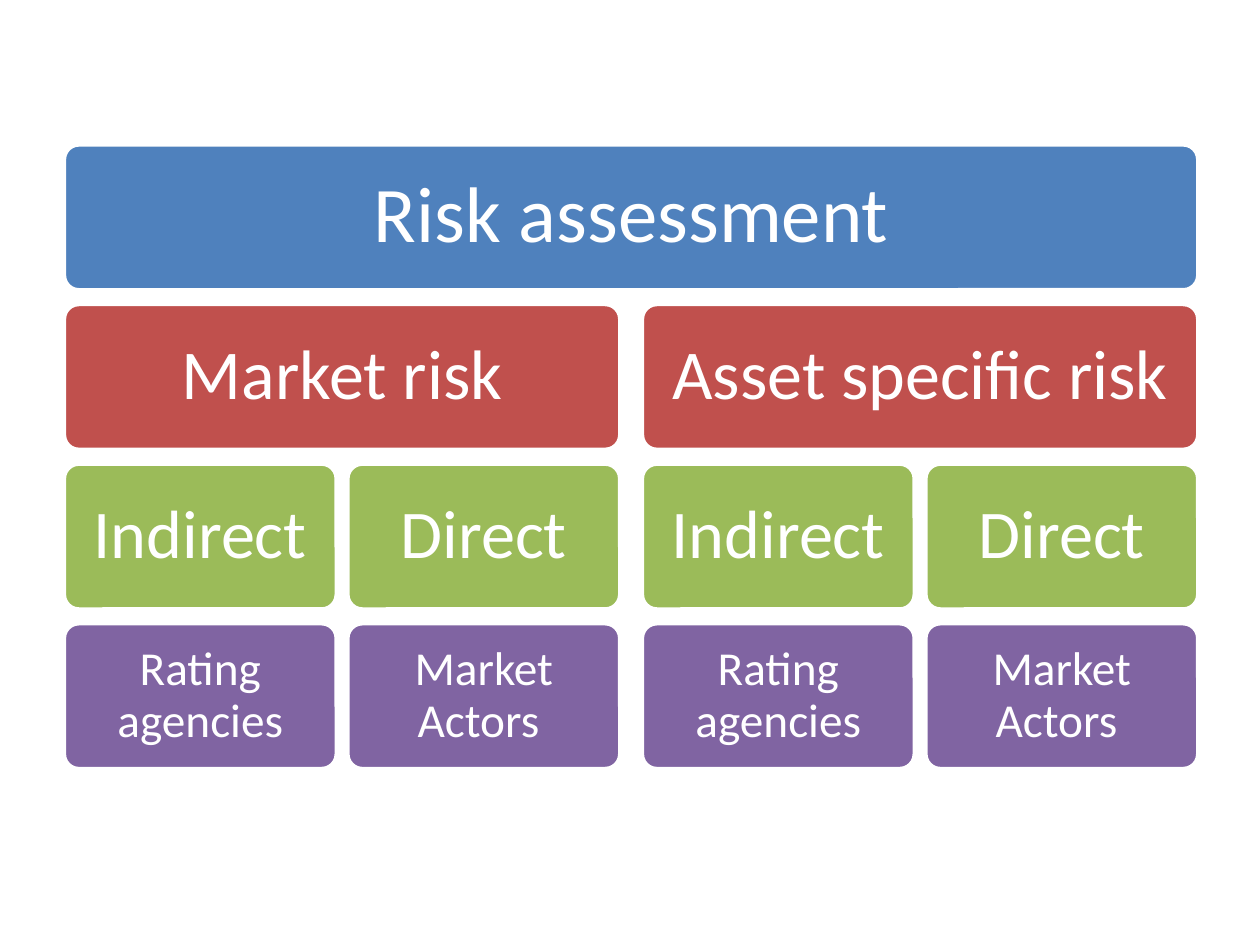
from pptx import Presentation
from pptx.dml.color import RGBColor
from pptx.enum.shapes import MSO_SHAPE
from pptx.enum.text import MSO_ANCHOR, PP_ALIGN
from pptx.util import Pt

WHITE = RGBColor(0xFF, 0xFF, 0xFF)
BLUE = RGBColor(0x4F, 0x81, 0xBD)
RED = RGBColor(0xC0, 0x50, 0x4D)
GREEN = RGBColor(0x9B, 0xBB, 0x59)
PURPLE = RGBColor(0x80, 0x64, 0xA2)

# Grid: two pairs of columns, four levels
LEFT, TOP = 36.8, 82.8
BOX_W, BOX_H = 155.4, 82.8
COL_STEP, PAIR_STEP, ROW_STEP = 162, 330.3, 91.2
COLS = [LEFT + pair * PAIR_STEP + col * COL_STEP
        for pair in range(2) for col in range(2)]

# Levels: fill, font size, inset, labels
LEVELS = [
    (BLUE, 45, 11, ["Risk assessment"]),
    (RED, 40, 10, ["Market risk", "Asset specific risk"]),
    (GREEN, 39, 9, ["Indirect", "Direct"] * 2),
    (PURPLE, 27, 5.5, ["Rating agencies", "Market Actors "] * 2),
]

prs = Presentation()
prs.slide_width, prs.slide_height = Pt(720), Pt(540)
s = prs.slides.add_slide(prs.slide_layouts[6])

# Hierarchy boxes: each level shares the four columns equally
for row, (fill, size, inset, labels) in enumerate(LEVELS):
    span = len(COLS) // len(labels)
    for i, label in enumerate(labels):
        first, last = COLS[i * span], COLS[(i + 1) * span - 1]
        sp = s.shapes.add_shape(
            MSO_SHAPE.ROUNDED_RECTANGLE, Pt(first), Pt(TOP + row * ROW_STEP),
            Pt(last + BOX_W - first), Pt(BOX_H))
        sp.adjustments[0] = 0.1
        sp.shadow.inherit = False
        sp.fill.solid()
        sp.fill.fore_color.rgb = fill
        sp.line.color.rgb = WHITE
        sp.line.width = Pt(2)

        # Label
        tf = sp.text_frame
        tf.word_wrap = True
        tf.vertical_anchor = MSO_ANCHOR.MIDDLE
        for side in ("left", "right", "top", "bottom"):
            setattr(tf, f"margin_{side}", Pt(inset))
        p = tf.paragraphs[0]
        p.alignment = PP_ALIGN.CENTER
        p.line_spacing = 0.9
        r = p.add_run()
        r.text = label
        for name, value in {"name": "Calibri", "size": Pt(size)}.items():
            setattr(r.font, name, value)
        r.font.color.rgb = WHITE

prs.save("out.pptx")
